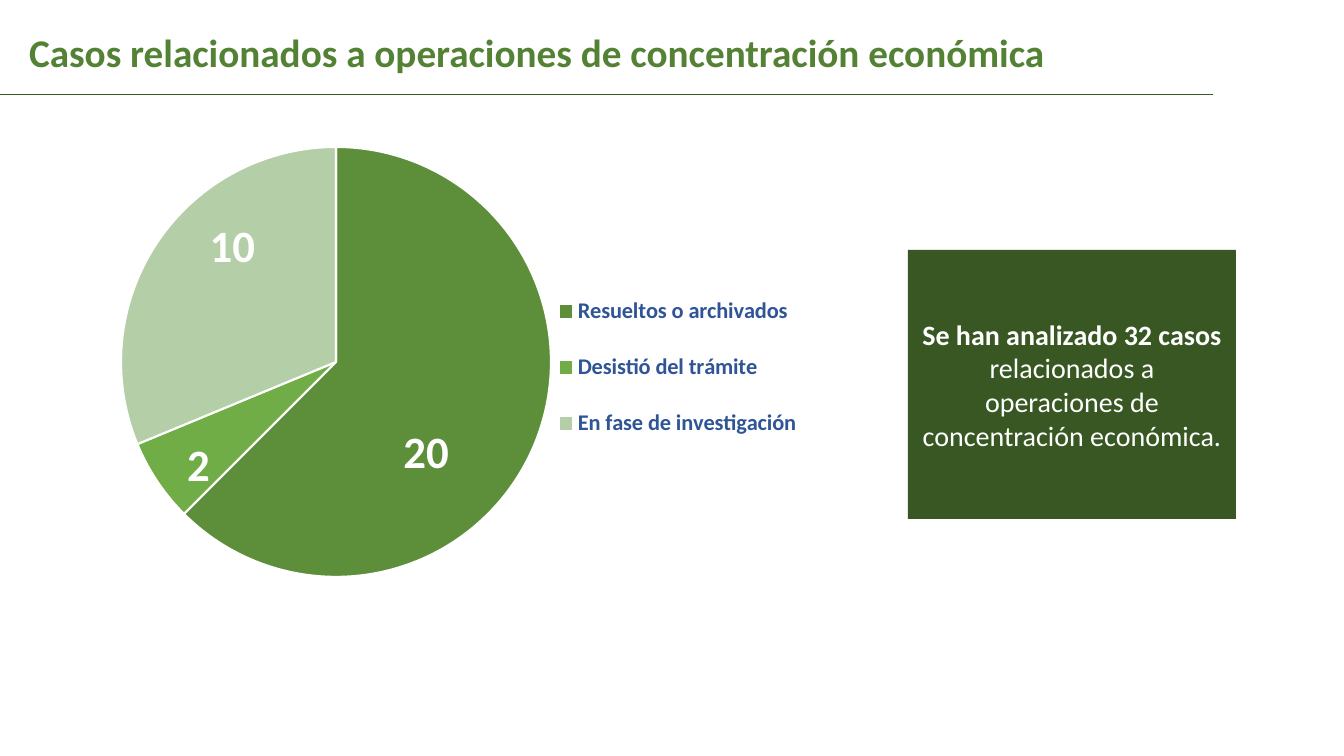
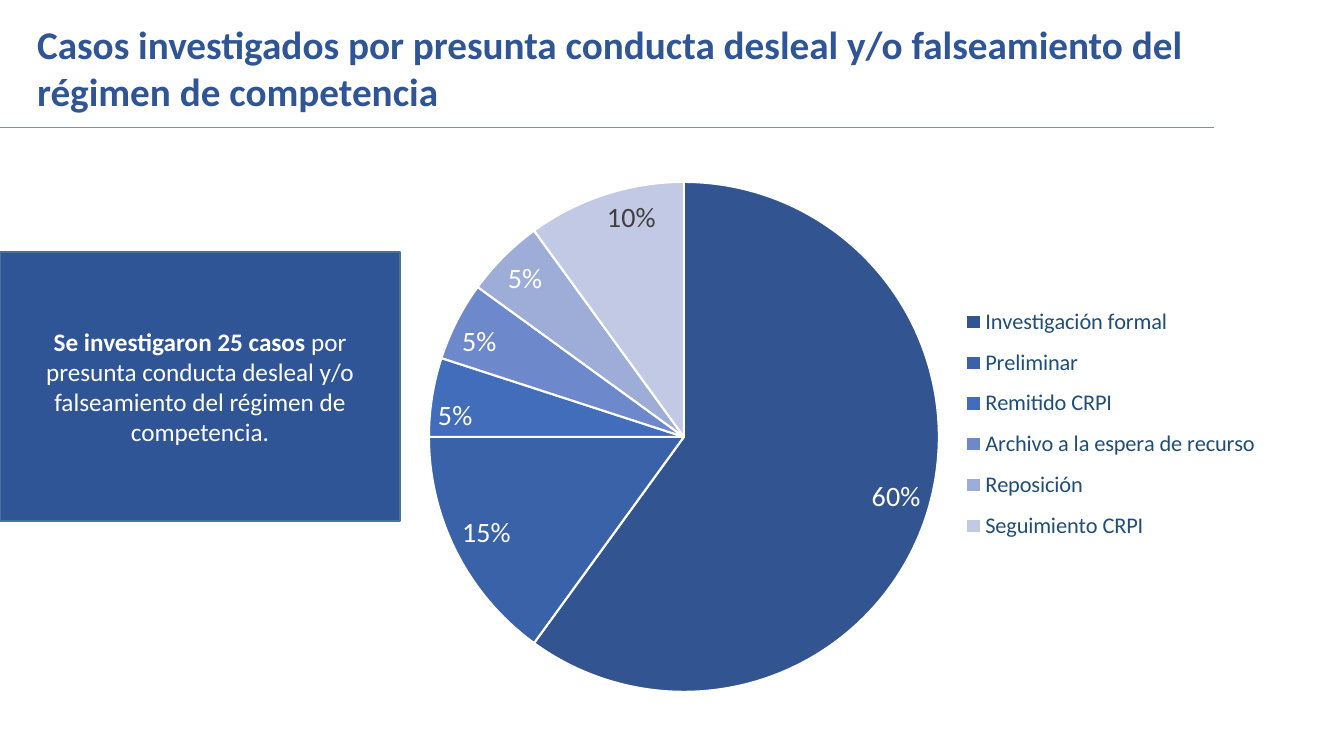
"""Two slides on competition cases, each with a title, a rule, a pie chart and a callout."""
import pptx
import pptx.chart.data
import pptx.dml.color
import pptx.enum.chart
import pptx.enum.shapes
import pptx.enum.text
import pptx.oxml
import pptx.oxml.ns
import pptx.util

RGB = pptx.dml.color.RGBColor
Pt = pptx.util.Pt
PP_ALIGN = pptx.enum.text.PP_ALIGN
ANCHOR = pptx.enum.text.MSO_ANCHOR
LABEL_POS = pptx.enum.chart.XL_LABEL_POSITION

W, H = 1344, 756
SCALE = 12192000 / W
FONT = "Calibri"
WHITE = RGB(0xFF, 0xFF, 0xFF)
GREY = RGB(0x40, 0x40, 0x40)
GREEN = RGB(0x54, 0x82, 0x35)
DARK_GREEN = RGB(0x38, 0x57, 0x23)
BLUE = RGB(0x2F, 0x55, 0x97)
NAVY = RGB(0x1F, 0x4E, 0x79)
SKY = RGB(0x5B, 0x9B, 0xD5)
STEEL = RGB(0x43, 0x73, 0x9E)

SLIDES = [
    {
        "title": "Casos relacionados a operaciones de concentración económica",
        "title_box": (19, 23, 1197, 57), "title_color": GREEN,
        "rule": (94, 1213, DARK_GREEN),
        "callout": ("Se han analizado 32 casos",
                    " relacionados a operaciones de concentración económica."),
        "callout_box": (908, 250, 328, 269), "callout_size": 20,
        "callout_fill": DARK_GREEN, "callout_line": None,
        "chart_box": (0, 120, 810, 528), "pie": (121, 147, 430, 430),
        "legend": (553, 269, 250, 197), "legend_color": BLUE,
        "bold": True, "label_size": 32, "format": "0",
        "label_pos": LABEL_POS.CENTER,
        "data": [
            ("Resueltos o archivados", 20, RGB(0x5D, 0x8F, 0x3B), WHITE, (-9, 50)),
            ("Desistió del trámite", 2, RGB(0x70, 0xAD, 0x47), WHITE, (-48, 45)),
            ("En fase de investigación", 10, RGB(0xB4, 0xCF, 0xA8), WHITE, (-14, -55)),
        ],
    },
    {
        "title": "Casos investigados por presunta conducta desleal y/o "
                 "falseamiento del régimen de competencia",
        "title_box": (27, 15, 1197, 105), "title_color": BLUE,
        "rule": (127, 1214, SKY),
        "callout": ("Se investigaron 25 casos ",
                    "por presunta conducta desleal y/o falseamiento del régimen de competencia."),
        "callout_box": (0, 252, 400, 269), "callout_size": 18,
        "callout_fill": BLUE, "callout_line": STEEL,
        "chart_box": (62, 133, 1204, 616), "pie": (429, 182, 510, 510),
        "legend": (961, 295, 300, 258), "legend_color": NAVY,
        "bold": False, "label_size": 20, "format": "0%",
        "label_pos": LABEL_POS.INSIDE_END,
        "data": [
            ("Investigación formal", 0.6, RGB(0x32, 0x54, 0x91), WHITE, None),
            ("Preliminar", 0.15, RGB(0x3A, 0x62, 0xA8), WHITE, None),
            ("Remitido CRPI", 0.05, RGB(0x41, 0x6D, 0xBB), WHITE, None),
            ("Archivo a la espera de recurso", 0.05, RGB(0x6D, 0x89, 0xCB), WHITE, None),
            ("Reposición", 0.05, RGB(0x9E, 0xAD, 0xD8), WHITE, None),
            ("Seguimiento CRPI", 0.1, RGB(0xC1, 0xC9, 0xE4), GREY, None),
        ],
    },
]


def px(*values):
    return [round(v * SCALE) for v in values]


def set_font(font, size, color, bold):
    font.name, font.size, font.bold = FONT, Pt(size), bold
    font.color.rgb = color


def layout_xml(fields):
    items = "".join(f'<c:{tag} val="{val}"/>' for tag, val in fields)
    return pptx.oxml.parse_xml(
        f'<c:layout {pptx.oxml.ns.nsdecls("c")}><c:manualLayout>{items}'
        "</c:manualLayout></c:layout>")


def box_layout(box, frame, inner=False):
    x, y, w, h = box
    left, top, width, height = frame
    fields = [("layoutTarget", "inner")] if inner else []
    fields += [("xMode", "edge"), ("yMode", "edge"),
               ("x", round((x - left) / width, 4)), ("y", round((y - top) / height, 4)),
               ("w", round(w / width, 4)), ("h", round(h / height, 4))]
    return layout_xml(fields)


def put_layout(parent, index, layout):
    for old in parent.findall(pptx.oxml.ns.qn("c:layout")):
        parent.remove(old)
    parent.insert(index, layout)


def add_title(s, d):
    sp = s.shapes.title
    sp.left, sp.top, sp.width, sp.height = px(*d["title_box"])
    tf = sp.text_frame
    tf.text = d["title"]
    tf.word_wrap = True
    tf.auto_size = pptx.enum.text.MSO_AUTO_SIZE.NONE
    tf.vertical_anchor = ANCHOR.TOP
    p = tf.paragraphs[0]
    p.alignment = PP_ALIGN.LEFT
    set_font(p.font, 28, d["title_color"], True)


def add_rule(s, y, right, color):
    line = s.shapes.add_connector(
        pptx.enum.shapes.MSO_CONNECTOR.STRAIGHT, *px(0, y, right, y))
    line.line.color.rgb = color
    line.line.width = Pt(0.5)
    line._element.spPr.append(
        pptx.oxml.parse_xml(f'<a:effectLst {pptx.oxml.ns.nsdecls("a")}/>'))


def add_callout(s, d):
    sp = s.shapes.add_shape(
        pptx.enum.shapes.MSO_SHAPE.RECTANGLE, *px(*d["callout_box"]))
    sp.shadow.inherit = False
    sp.fill.solid()
    sp.fill.fore_color.rgb = d["callout_fill"]
    if d["callout_line"] is None:
        sp.line.fill.background()
    else:
        sp.line.color.rgb = d["callout_line"]
        sp.line.width = Pt(1)
    tf = sp.text_frame
    tf.word_wrap = True
    tf.vertical_anchor = ANCHOR.MIDDLE
    p = tf.paragraphs[0]
    p.alignment = PP_ALIGN.CENTER
    set_font(p.font, d["callout_size"], WHITE, False)
    for text, bold in zip(d["callout"], (True, False)):
        r = p.add_run()
        r.text = text
        r.font.bold = bold


def add_pie(s, d):
    frame = d["chart_box"]
    cd = pptx.chart.data.CategoryChartData(number_format=d["format"])
    cd.categories = [row[0] for row in d["data"]]
    cd.add_series("Casos", [row[1] for row in d["data"]])
    chart = s.shapes.add_chart(
        pptx.enum.chart.XL_CHART_TYPE.PIE, *px(*frame), cd).chart
    chart.has_title = False
    chart.font.name, chart.font.size = FONT, Pt(10)

    chart.has_legend = True
    legend = chart.legend
    legend.position = pptx.enum.chart.XL_LEGEND_POSITION.RIGHT
    legend.include_in_layout = False
    set_font(legend.font, 16, d["legend_color"], d["bold"])
    put_layout(legend._element, 1, box_layout(d["legend"], frame))

    plot = chart.plots[0]
    plot.vary_by_categories = True
    put_layout(plot._element.getparent(), 0, box_layout(d["pie"], frame, True))
    series = plot.series[0]
    labels = series.data_labels
    labels.show_value = True
    labels.show_percentage = False
    labels.number_format = d["format"]
    labels.number_format_is_linked = False
    labels.position = d["label_pos"]
    set_font(labels.font, d["label_size"], WHITE, d["bold"])

    for i, (_, _, fill, label_color, shift) in enumerate(d["data"]):
        point = series.points[i]
        point.format.fill.solid()
        point.format.fill.fore_color.rgb = fill
        point.format.line.color.rgb = WHITE
        point.format.line.width = Pt(1.5)
        label = point.data_label
        set_font(label.font, d["label_size"], label_color, d["bold"])
        label.position = d["label_pos"]
        if shift:
            dx, dy = shift
            put_layout(labels._element.findall(pptx.oxml.ns.qn("c:dLbl"))[i], 1, layout_xml(
                [("x", round(dx / frame[2], 4)), ("y", round(dy / frame[3], 4))]))


def main():
    prs = pptx.Presentation()
    prs.slide_width, prs.slide_height = px(W, H)
    for d in SLIDES:
        s = prs.slides.add_slide(prs.slide_layouts[5])
        add_pie(s, d)
        add_title(s, d)
        add_callout(s, d)
        add_rule(s, *d["rule"])
    prs.save("out.pptx")


if __name__ == "__main__":
    main()
